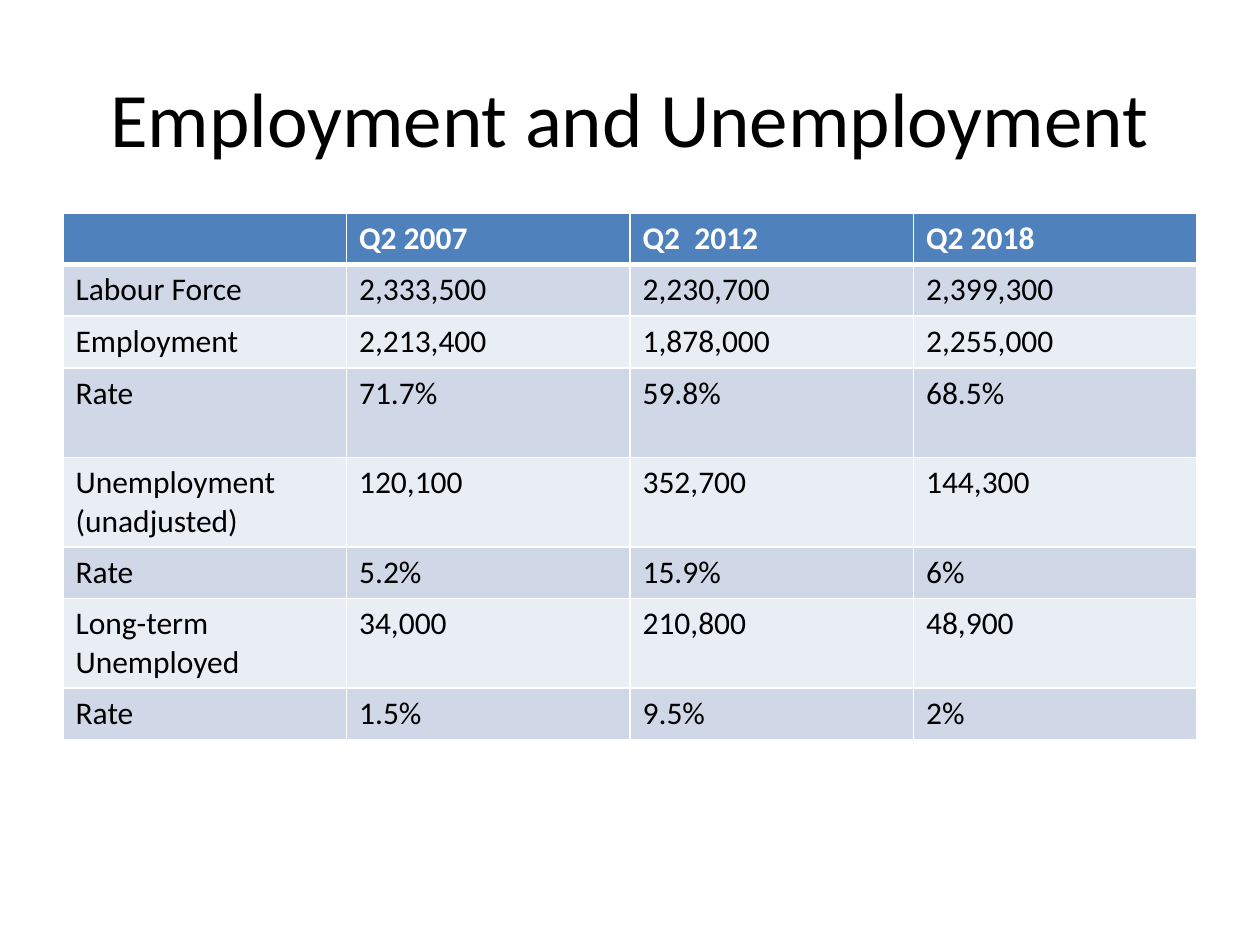
from lxml import etree
from pptx import Presentation
from pptx.dml.color import RGBColor
from pptx.enum import text
from pptx.oxml import ns
from pptx.util import Inches, Pt

FONT = "Calibri"
WHITE, BLACK = "FFFFFF", "000000"
HEAD, BANDS = "4F81BD", ("D0D8E8", "E9EDF4")
LOW, TALL = 0.41, 0.71

ROWS = [
    (LOW, "", "Q2 2007", "Q2  2012", "Q2 2018"),
    (LOW, "Labour Force", "2,333,500", "2,230,700", "2,399,300"),
    (LOW, "Employment", "2,213,400", "1,878,000", "2,255,000"),
    (TALL, "Rate", "71.7%", "59.8%", "68.5%"),
    (TALL, "Unemployment (unadjusted)", "120,100", "352,700", "144,300"),
    (LOW, "Rate", "5.2%", "15.9%", "6%"),
    (TALL, "Long-term Unemployed", "34,000", "210,800", "48,900"),
    (LOW, "Rate", "1.5%", "9.5%", "2%"),
]


def color(code):
    return RGBColor.from_string(code)


def style(para, size, code, bold=False):
    font = para.font
    font.name, font.size, font.bold = FONT, Pt(size), bold
    font.color.rgb = color(code)


def border(cell, widths):
    """Draw white cell edges; widths are points by side letter."""
    props = cell._tc.get_or_add_tcPr()
    for side in "LRTB":
        line = etree.SubElement(props, ns.qn("a:ln" + side), w=str(Pt(widths[side])))
        fill = etree.SubElement(line, ns.qn("a:solidFill"))
        etree.SubElement(fill, ns.qn("a:srgbClr"), val=WHITE)


def add_title(slide, words, left, top, width, height):
    box = slide.shapes.add_textbox(Inches(left), Inches(top), Inches(width), Inches(height))
    frame = box.text_frame
    frame.word_wrap = True
    frame.vertical_anchor = text.MSO_ANCHOR.MIDDLE
    para = frame.paragraphs[0]
    para.text = words
    para.alignment = text.PP_ALIGN.CENTER
    style(para, 44, BLACK)


def add_grid(slide, rows, left, top, width):
    count = len(rows[0]) - 1
    height = sum(row[0] for row in rows)
    grid = slide.shapes.add_table(
        len(rows), count, Inches(left), Inches(top), Inches(width), Inches(height)
    ).table
    for col in grid.columns:
        col.width = Inches(width / count)
    for r, (tall, *words) in enumerate(rows):
        grid.rows[r].height = Inches(tall)
        head = r == 0
        widths = {"L": 1, "R": 1, "T": 3 if r == 1 else 1, "B": 3 if head else 1}
        for c, word in enumerate(words):
            cell = grid.cell(r, c)
            cell.text = word
            style(cell.text_frame.paragraphs[0], 18, WHITE if head else BLACK, head)
            border(cell, widths)
            cell.fill.solid()
            cell.fill.fore_color.rgb = color(HEAD if head else BANDS[(r - 1) % 2])


def main():
    deck = Presentation()
    deck.slide_width, deck.slide_height = Inches(10), Inches(7.5)
    slide = deck.slides.add_slide(deck.slide_layouts[6])
    add_title(slide, "Employment and Unemployment", 0.5, 0.3, 9, 1.25)
    add_grid(slide, ROWS, 0.5, 1.69, 9)
    deck.save("out.pptx")


if __name__ == "__main__":
    main()
